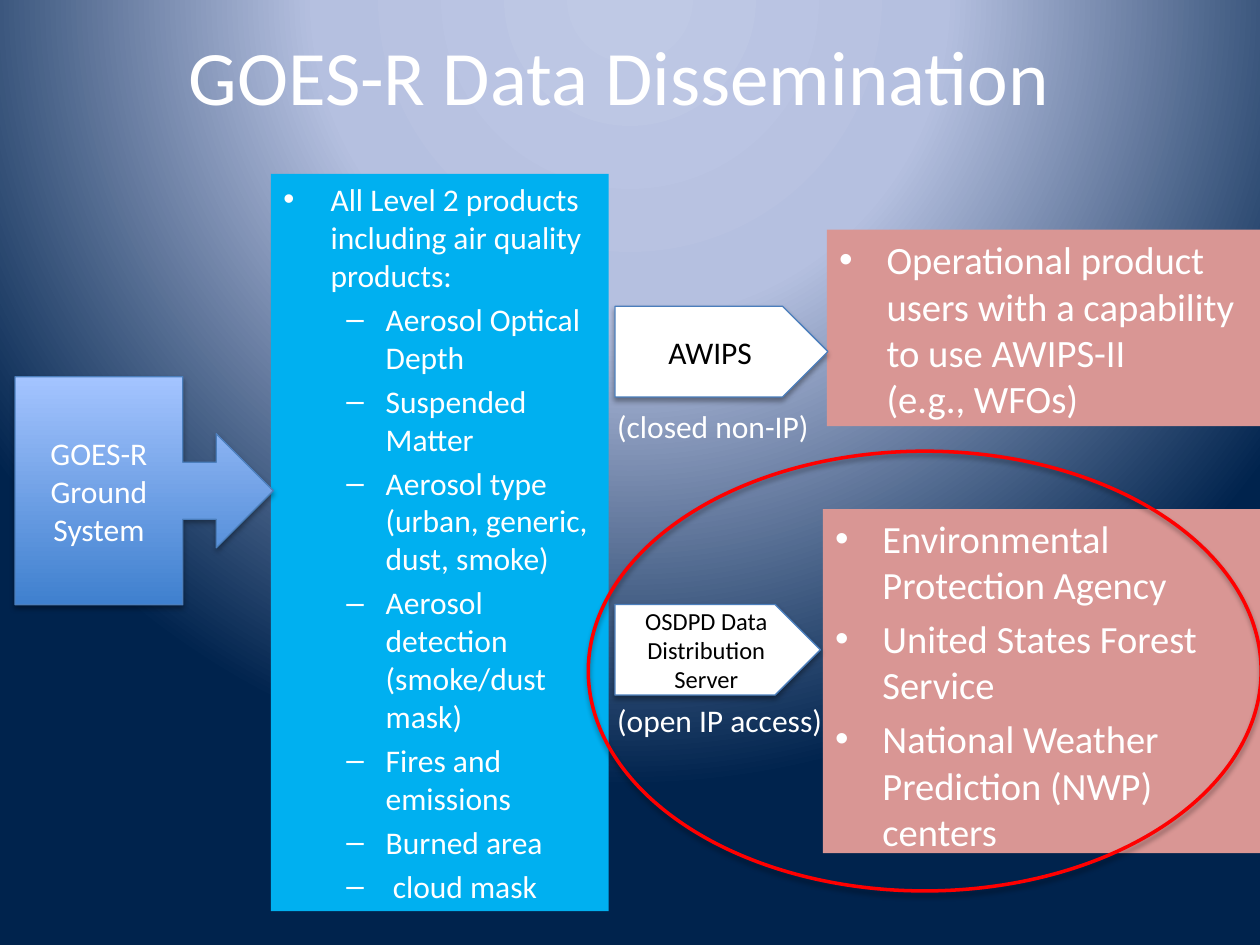
from pptx import Presentation
from pptx.dml.color import RGBColor
from pptx.enum.shapes import MSO_SHAPE
from pptx.enum.text import MSO_ANCHOR, PP_ALIGN
from pptx.oxml import parse_xml
from pptx.oxml.ns import nsdecls
from pptx.util import Pt

# Content: bullets are (level, text); a vertical tab is a line break
TITLE = "GOES-R Data Dissemination"
PRODUCTS = [
    (0, "All Level 2 products including air quality products:"),
    (1, "Aerosol Optical Depth"),
    (1, "Suspended Matter"),
    (1, "Aerosol type (urban, generic, dust, smoke)"),
    (1, "Aerosol detection (smoke/dust mask)"),
    (1, "Fires and emissions"),
    (1, "Burned area"),
    (1, " cloud mask"),
]
OPERATIONAL_USERS = [
    (0, "Operational product users with a capability to use AWIPS-II\v(e.g., WFOs)"),
]
OPEN_USERS = [
    (0, "Environmental Protection Agency"),
    (0, "United States Forest Service"),
    (0, "National Weather Prediction (NWP) centers"),
]

# Panels: bullets, (left, top, width, height), fill, text size
PANELS = [
    (PRODUCTS, (154.8, 99.4, 193, 421.2), "00B0F0", 18),
    (OPERATIONAL_USERS, (472.5, 131.3, 249.8, 112.3), "D99694", 22.1),
    (OPEN_USERS, (470.2, 290.9, 249.8, 196.6), "D99694", 22),
]
# Channels: text, (left, top, width, height), text size
CHANNELS = [
    ("AWIPS", (351.4, 175, 121.7, 51.8), 18),
    ("OSDPD Data Distribution Server", (351.4, 345.4, 117.4, 51.8), 14),
]
ACCESS_NOTES = [
    ("(closed non-IP)", (345.6, 229.2, 125.3, 29)),
    ("(open IP access)", (345.6, 397, 132.5, 29)),
]
BACKGROUND_STOPS = [(0, "BFC9E5"), (40, "B5C0E0"), (100, "00234D")]
# Bullet levels: mark, left margin, hanging indent
LEVELS = [("•", 27, 27), ("–", 58.5, 22.5)]
WHITE, BLACK, BORDER = "FFFFFF", "000000", "4B7EBC"


def color(value):
    return RGBColor.from_string(value)


def format_spans(para, size, ink):
    for span in para.runs:
        span.font.name = "Calibri"
        span.font.size = Pt(size)
        span.font.color.rgb = color(ink)


def write(box, text, size, ink=WHITE, centered=True):
    frame = box.text_frame
    frame.word_wrap = centered
    frame.text = text
    para = frame.paragraphs[0]
    if centered:
        frame.vertical_anchor = MSO_ANCHOR.MIDDLE
        para.alignment = PP_ALIGN.CENTER
    format_spans(para, size, ink)


def add_box(page, kind, place, border=None, width=0.75):
    box = page.shapes.add_shape(kind, *map(Pt, place))
    box.shadow.inherit = False
    if border:
        box.line.color.rgb = color(border)
        box.line.width = Pt(width)
    else:
        box.line.fill.background()
    return box


def fill_solid(box, value):
    box.fill.solid()
    box.fill.fore_color.rgb = color(value)


def drop_shadow(box):
    effects = box._element.spPr.find(
        "{http://schemas.openxmlformats.org/drawingml/2006/main}effectLst")
    effects.append(parse_xml(
        f'<a:outerShdw {nsdecls("a")} blurRad="{Pt(3.1)}" dist="{Pt(1.8)}" '
        'dir="5400000" rotWithShape="0"><a:srgbClr val="000000">'
        '<a:alpha val="35000"/></a:srgbClr></a:outerShdw>'))


def write_bullets(box, bullets, size):
    frame = box.text_frame
    frame.word_wrap = True
    frame.vertical_anchor = MSO_ANCHOR.TOP
    for index, (level, text) in enumerate(bullets):
        para = frame.paragraphs[0] if index == 0 else frame.add_paragraph()
        para.text = text
        para.level = level
        para.alignment = PP_ALIGN.LEFT
        para.space_before = Pt(round(size * 0.2, 1))
        format_spans(para, size, WHITE)
        mark, margin, hanging = LEVELS[level]
        props = para._p.get_or_add_pPr()
        props.set("marL", str(Pt(margin)))
        props.set("indent", str(-Pt(hanging)))
        props.append(parse_xml(f'<a:buFont {nsdecls("a")} typeface="Arial"/>'))
        props.append(parse_xml(f'<a:buChar {nsdecls("a")} char="{mark}"/>'))


def paint_background(page):
    stops = "".join(
        f'<a:gs pos="{position * 1000}"><a:srgbClr val="{value}"/></a:gs>'
        for position, value in BACKGROUND_STOPS)
    page._element.cSld.insert(0, parse_xml(
        f'<p:bg {nsdecls("p", "a")}><p:bgPr><a:gradFill rotWithShape="1">'
        f'<a:gsLst>{stops}</a:gsLst><a:path path="circle">'
        '<a:fillToRect l="50000" t="-80000" r="50000" b="180000"/></a:path>'
        '</a:gradFill><a:effectLst/></p:bgPr></p:bg>'))


def main():
    deck = Presentation()
    deck.slide_width, deck.slide_height = Pt(720), Pt(540)
    page = deck.slides.add_slide(deck.slide_layouts[6])
    paint_background(page)

    # Title
    title = page.shapes.add_textbox(Pt(41), Pt(3.6), Pt(625.7), Pt(78.5))
    write(title, TITLE, 44)

    # Bulleted panels
    for bullets, place, fill, size in PANELS:
        panel = add_box(page, MSO_SHAPE.RECTANGLE, place)
        fill_solid(panel, fill)
        write_bullets(panel, bullets, size)

    # Distribution channels
    for text, place, size in CHANNELS:
        channel = add_box(page, MSO_SHAPE.PENTAGON, place, BORDER)
        fill_solid(channel, WHITE)
        drop_shadow(channel)
        write(channel, text, size, BLACK)

    # Ground system, lighter towards the top
    ground = add_box(page, MSO_SHAPE.RIGHT_ARROW_CALLOUT,
                     (8.6, 215.3, 147.6, 130.3), BORDER)
    ground.fill.gradient()
    ground.fill.gradient_angle = 90
    for stop, (position, value) in zip(ground.fill.gradient_stops,
                                       [(0, "3F80CE"), (1, "A4C4FF")]):
        stop.position = position
        stop.color.rgb = color(value)
    drop_shadow(ground)
    write(ground, "GOES-R Ground System", 18)

    # Access notes under the channels
    for text, place in ACCESS_NOTES:
        note = page.shapes.add_textbox(*map(Pt, place))
        write(note, text, 18, centered=False)

    # Ring around the open access route
    ring = add_box(page, MSO_SHAPE.OVAL, (336.2, 257.8, 384.5, 251.3), "FF0000", 2)
    ring.fill.background()
    drop_shadow(ring)

    deck.save("out.pptx")


if __name__ == "__main__":
    main()
